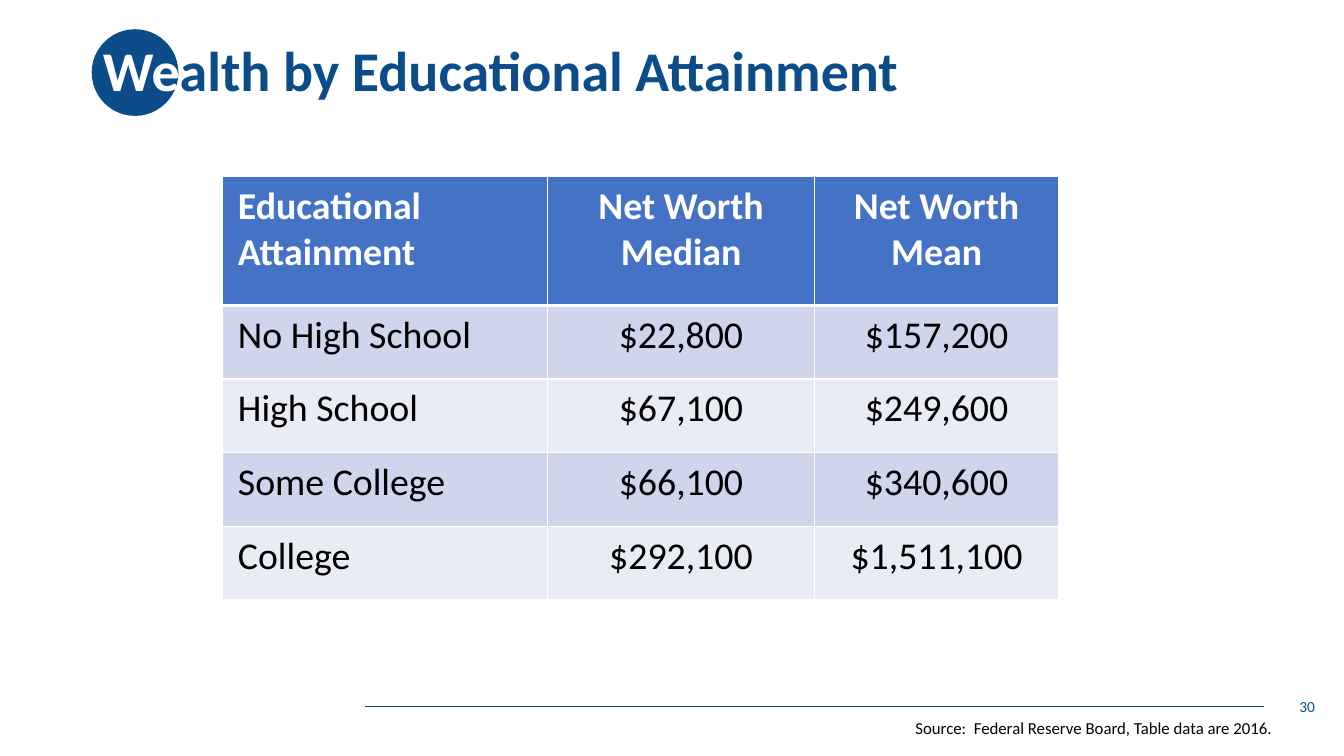
from lxml import etree
from pptx import Presentation
from pptx.dml.color import RGBColor
from pptx.enum.shapes import MSO_CONNECTOR, MSO_SHAPE
from pptx.enum.text import MSO_ANCHOR, MSO_AUTO_SIZE, PP_ALIGN
from pptx.oxml import parse_xml
from pptx.oxml.ns import nsdecls, qn
from pptx.util import Inches, Pt

LEFT, CENTER, RIGHT = PP_ALIGN.LEFT, PP_ALIGN.CENTER, PP_ALIGN.RIGHT
MIDDLE = MSO_ANCHOR.MIDDLE
NAVY, WHITE, BLACK = "0C4C88", "FFFFFF", "000000"
HEADER, BAND_DARK, BAND_LIGHT = "4472C4", "CFD5EA", "E9EBF5"


def rgb(value):
    return RGBColor.from_string(value)


def add_run(p, text, size, color, bold=False):
    r = p.add_run()
    r.text = text
    for name, value in {"name": "Calibri", "size": Pt(size), "bold": bold}.items():
        setattr(r.font, name, value)
    r.font.color.rgb = rgb(color)


prs = Presentation()
prs.slide_width, prs.slide_height = Inches(13.33), Inches(7.5)
s = prs.slides.add_slide(prs.slide_layouts[5])

# Footer rule
rule = s.shapes.add_connector(
    MSO_CONNECTOR.STRAIGHT, Inches(3.62), Inches(7.01), Inches(12.54), Inches(7.01))
rule.line.color.rgb = rgb(NAVY)
rule.line.width = Pt(0.5)
etree.SubElement(rule._element.spPr, qn("a:effectLst"))

# Circle behind the start of the title
circle = s.shapes.add_shape(
    MSO_SHAPE.OVAL, Inches(0.91), Inches(0.29), Inches(0.86), Inches(0.86))
circle.shadow.inherit = False
circle.fill.solid()
circle.fill.fore_color.rgb = rgb(NAVY)
circle.line.fill.background()

# Title, brought in front of the circle
title = s.shapes.title
s.shapes._spTree.append(title._element)
title.left, title.top = Inches(0.92), Inches(0)
title.width, title.height = Inches(11.5), Inches(1.45)
tf = title.text_frame
tf.auto_size = MSO_AUTO_SIZE.NONE
tf.vertical_anchor = MIDDLE
p = tf.paragraphs[0]
p.alignment = LEFT
p.line_spacing = 0.9
add_run(p, "We", 40, WHITE, True)
add_run(p, "alth by Educational Attainment", 40, NAVY, True)

# Net worth table
rows = [
    ("Educational\nAttainment", "Net Worth\nMedian", "Net Worth\nMean"),
    ("No High School", "$22,800", "$157,200"),
    ("High School", "$67,100", "$249,600"),
    ("Some College", "$66,100", "$340,600"),
    ("College", "$292,100", "$1,511,100"),
]
margins = {"margin_left": 0.15, "margin_right": 0.15,
           "margin_top": 0.07, "margin_bottom": 0.07}
table = s.shapes.add_table(
    len(rows), 3, Inches(2.21), Inches(1.75), Inches(8.29), Inches(4.2)).table
for column, width in zip(table.columns, (3.22, 2.65, 2.42)):
    column.width = Inches(width)
for i, values in enumerate(rows):
    is_header = i == 0
    table.rows[i].height = Inches(1.28 if is_header else 0.73)
    fill = HEADER if is_header else (BAND_DARK if i % 2 else BAND_LIGHT)
    for j, value in enumerate(values):
        cell = table.cell(i, j)
        for name, inset in margins.items():
            setattr(cell, name, Inches(inset))
        # White borders, heavier between the header and the body
        for side in "LRTB":
            heavy = (side == "B" and is_header) or (side == "T" and i == 1)
            cell._tc.get_or_add_tcPr().append(parse_xml(
                f'<a:ln{side} {nsdecls("a")} w="{Pt(3 if heavy else 1)}"><a:solidFill>'
                f'<a:srgbClr val="{WHITE}"/></a:solidFill></a:ln{side}>'))
        cell.fill.solid()
        cell.fill.fore_color.rgb = rgb(fill)
        tf = cell.text_frame
        for k, line in enumerate(value.split("\n")):
            p = tf.add_paragraph() if k else tf.paragraphs[0]
            p.alignment = CENTER if j else LEFT
            add_run(p, line, 27, WHITE if is_header else BLACK, is_header)

# Slide number and source note
notes = [
    ("30", 10.14, 6.81, 3, 0.4, 11, NAVY, RIGHT, MIDDLE, True),
    ("Source:  Federal Reserve Board, Table data are 2016.",
     8.98, 7.07, 3.78, 0.3, 12, BLACK, LEFT, MSO_ANCHOR.TOP, False),
]
for text, x, y, w, h, size, color, align, anchor, wrap in notes:
    box = s.shapes.add_textbox(Inches(x), Inches(y), Inches(w), Inches(h))
    tf = box.text_frame
    tf.word_wrap = wrap
    tf.vertical_anchor = anchor
    p = tf.paragraphs[0]
    p.alignment = align
    add_run(p, text, size, color)

prs.save("out.pptx")
